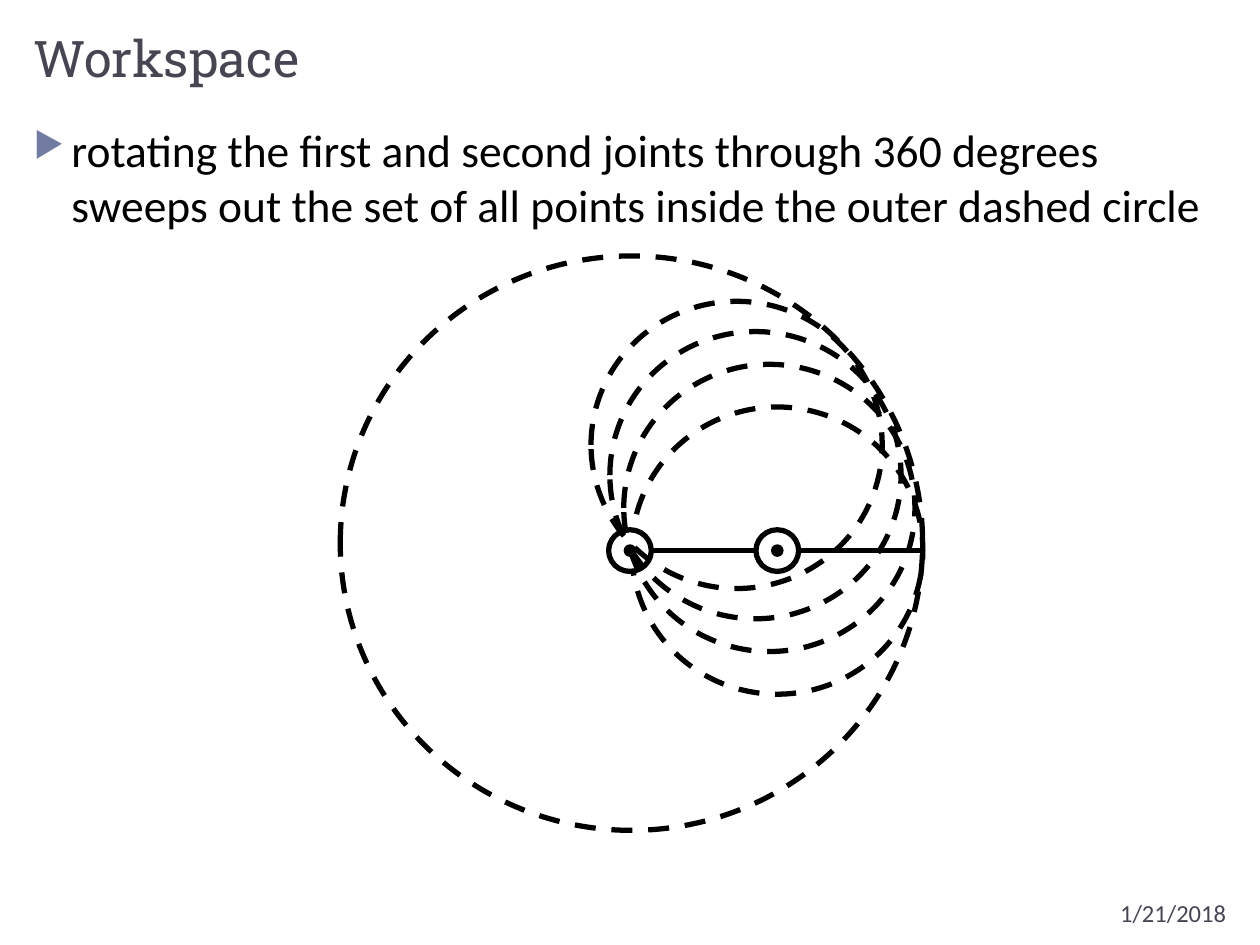
from dataclasses import dataclass

from lxml import etree
from pptx import Presentation
from pptx.dml.color import RGBColor
from pptx.enum.dml import MSO_LINE
from pptx.enum.shapes import MSO_CONNECTOR, MSO_SHAPE
from pptx.enum.text import MSO_ANCHOR, PP_ALIGN
from pptx.oxml.ns import qn
from pptx.util import Cm, Pt

OVAL = MSO_SHAPE.OVAL
STRAIGHT = MSO_CONNECTOR.STRAIGHT
DASH = MSO_LINE.DASH
TOP, BOTTOM = MSO_ANCHOR.TOP, MSO_ANCHOR.BOTTOM
LEFT, RIGHT = PP_ALIGN.LEFT, PP_ALIGN.RIGHT


@dataclass(frozen=True)
class Theme:
    heading_font: str = "Roboto Slab"
    body_font: str = "Calibri"
    ink: str = "000000"
    muted: str = "464653"
    accent: str = "727CA3"
    paper: str = "FFFFFF"
    title_size: float = 28.8
    body_size: float = 26
    date_size: float = 14
    stroke: float = 3
    thin_stroke: float = 1.5


class SlideBuilder:
    def __init__(self, slide, theme):
        self.shapes = slide.shapes
        self.theme = theme

    def text(self, words, box, font, size, color,
             align=LEFT, anchor=TOP, bullet=None):
        frame = self.shapes.add_textbox(*map(Cm, box)).text_frame
        frame.word_wrap = True
        frame.vertical_anchor = anchor
        paragraph = frame.paragraphs[0]
        paragraph.alignment = align
        if bullet:
            self.bullet(paragraph, bullet)
        run = paragraph.add_run()
        run.text = words
        run.font.name = font
        run.font.size = Pt(size)
        run.font.color.rgb = RGBColor.from_string(color)

    def bullet(self, paragraph, symbol, indent=0.76):
        properties = paragraph._p.get_or_add_pPr()
        properties.set("marL", str(Cm(indent)))
        properties.set("indent", str(-Cm(indent)))
        color = etree.SubElement(properties, qn("a:buClr"))
        etree.SubElement(color, qn("a:srgbClr"), val=self.theme.accent)
        etree.SubElement(properties, qn("a:buSzPct"), val="76000")
        etree.SubElement(properties, qn("a:buChar"), char=symbol)

    def stroke(self, line, width):
        line.color.rgb = RGBColor.from_string(self.theme.ink)
        line.width = Pt(width)

    def ellipse(self, center, size, fill=None, width=None, dash=None):
        (x, y), (w, h) = center, size
        oval = self.shapes.add_shape(
            OVAL, Cm(x - w / 2), Cm(y - h / 2), Cm(w), Cm(h))
        oval.shadow.inherit = False
        if fill:
            oval.fill.solid()
            oval.fill.fore_color.rgb = RGBColor.from_string(fill)
        else:
            oval.fill.background()
        self.stroke(oval.line, width or self.theme.stroke)
        if dash:
            oval.line.dash_style = dash

    def link(self, start, end):
        arm = self.shapes.add_connector(STRAIGHT, *map(Cm, start + end))
        self.stroke(arm.line, self.theme.stroke)
        etree.SubElement(arm._element.spPr, qn("a:effectLst"))


def main():
    theme = Theme()
    deck = Presentation()
    deck.slide_width, deck.slide_height = Cm(25.4), Cm(19.05)
    page = SlideBuilder(deck.slides.add_slide(deck.slide_layouts[6]), theme)

    # Arm geometry in centimetres
    shoulder, elbow, tip = (12.7, 11.1), (15.67, 11.1), (18.64, 11.1)
    sweep_size = (5.87, 5.79)
    reach_center = (12.73, 10.95)
    reach_size = tuple(2 * side for side in sweep_size)
    rotated_elbows = [(15.51, 10.24), (15.23, 9.58), (14.85, 8.97)]

    # Sweep of the second joint, behind the arm
    page.ellipse(elbow, sweep_size, dash=DASH)

    # Title, date and statement
    page.text("Workspace", (0.43, 0.43, 24.56, 1.47), theme.heading_font,
              theme.title_size, theme.muted, anchor=BOTTOM)
    page.text("1/21/2018", (20.32, 17.98, 4.65, 0.69), theme.body_font,
              theme.date_size, theme.muted, align=RIGHT)
    page.text("rotating the first and second joints through 360 degrees "
              "sweeps out the set of all points inside the outer dashed circle",
              (0.43, 2.34, 24.56, 15.24), theme.body_font,
              theme.body_size, theme.ink, bullet="▶")

    # Two-link arm with its joints
    page.link(elbow, shoulder)
    page.link(tip, elbow)
    for joint in (elbow, shoulder):
        page.ellipse(joint, (0.86, 0.84), fill=theme.paper)
    for joint in (shoulder, elbow):
        page.ellipse(joint, (0.2, 0.2), fill=theme.ink, width=theme.thin_stroke)

    # Outer reach and the sweeps after turning the first joint
    page.ellipse(reach_center, reach_size, dash=DASH)
    for center in rotated_elbows:
        page.ellipse(center, sweep_size, dash=DASH)

    deck.save("out.pptx")


if __name__ == "__main__":
    main()
